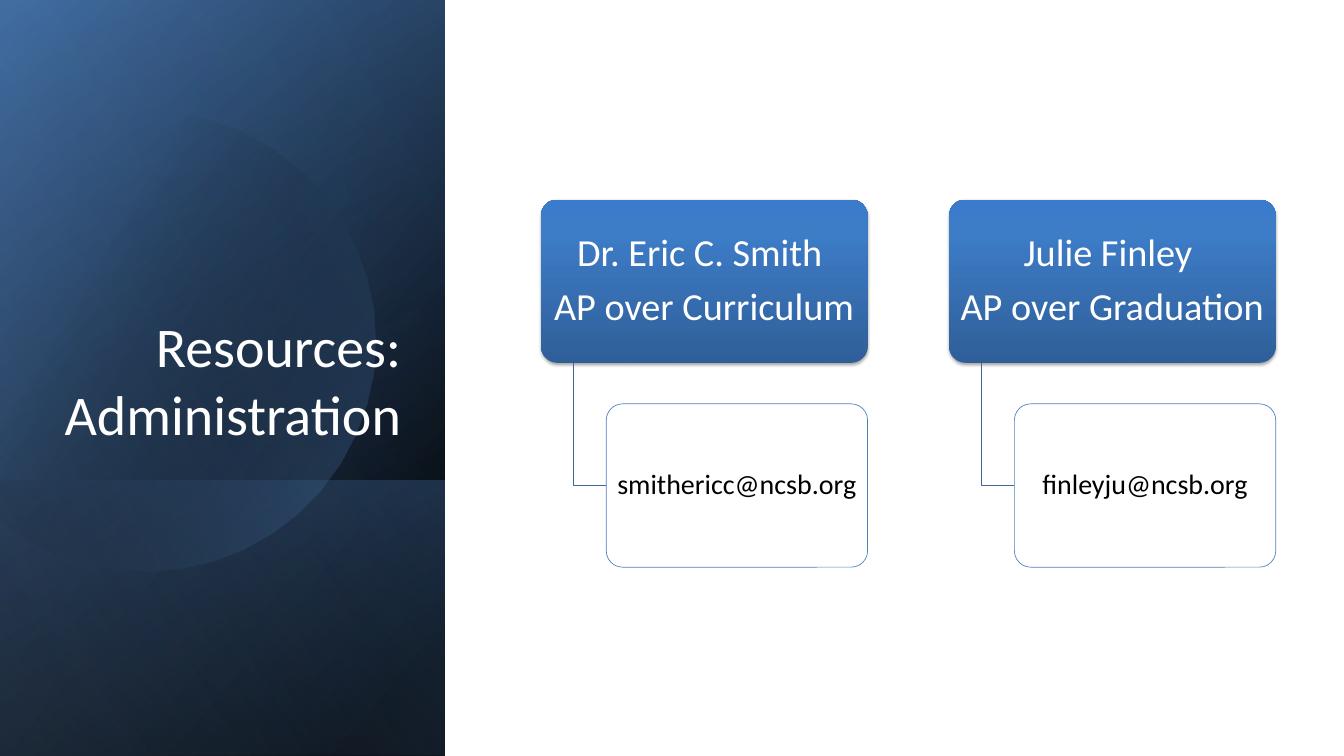
from dataclasses import dataclass
from math import acos, cos, sin

from lxml.etree import SubElement
from pptx import Presentation
from pptx.dml.color import RGBColor
from pptx.enum.shapes import MSO_SHAPE
from pptx.enum.text import MSO_ANCHOR, MSO_AUTO_SIZE, PP_ALIGN
from pptx.oxml import parse_xml
from pptx.oxml.ns import nsdecls, qn
from pptx.util import Pt


@dataclass(frozen=True)
class Theme:
    """Colours, font and type sizes of the slide."""
    font: str = "Calibri"
    white: str = "FFFFFF"
    black: str = "000000"
    accent: str = "4F81BD"
    navy: str = "376092"
    pale: str = "95B3D7"
    stem: str = "3F6797"
    card: tuple = ((0, "2F5F99", 100), (80, "3D7CC7", 100), (100, "3A7CCB", 100))
    title: float = 60
    name: float = 41
    mail: float = 30


T = Theme()
SLIDE_W, SLIDE_H, PANEL_W, BAND_H = 1440, 810, 476.6, 295.2
CARD_X, CARD_Y, CARD_W, CARD_H = 579.6, 213.8, 350, 175
PITCH, INDENT, GAP = 437.3, 70, 43.9
PEOPLE = [
    (["Dr. Eric C. Smith ", "AP over Curriculum"], "smithericc@ncsb.org"),
    (["Julie Finley ", "AP over Graduation"], "finleyju@ncsb.org"),
]


def set_gradient(sp, stops, angle):
    """Fill a shape with (position, colour, opacity) stops along an angle."""
    gs = "".join(
        f'<a:gs pos="{pos * 1000}"><a:srgbClr val="{color}">'
        f'<a:alpha val="{opacity * 1000}"/></a:srgbClr></a:gs>'
        for pos, color, opacity in stops)
    sp.fill.background()
    spPr = sp._element.spPr
    spPr.replace(spPr.find(qn("a:noFill")), parse_xml(
        f'<a:gradFill {nsdecls("a")} rotWithShape="1"><a:gsLst>{gs}</a:gsLst>'
        f'<a:lin ang="{angle * 60000}" scaled="0"/></a:gradFill>'))


def set_line(sp, color):
    """Give a shape a thin solid outline."""
    sp.line.color.rgb = RGBColor.from_string(color)
    sp.line.width = Pt(0.75)


def add_shade(s, top, height, stops, angle):
    """Add one gradient layer of the side panel, turned a quarter."""
    left = (PANEL_W - height) / 2
    sp = s.shapes.add_shape(MSO_SHAPE.RECTANGLE, Pt(left), Pt(top + (height - PANEL_W) / 2),
                            Pt(height), Pt(PANEL_W))
    sp.rotation = 90
    sp._element.spPr.xfrm.set("flipH", "1")
    sp.shadow.inherit = False
    sp.line.fill.background()
    set_gradient(sp, stops, angle)


def add_disc(s, cx, cy, radius, stops, angle, steps=32):
    """Add a disc cut off by the left edge of the slide."""
    half = acos(-cx / radius)
    turns = [half * (2 * i / steps - 1) for i in range(steps + 1)]
    points = [(Pt(cx + radius * cos(t)), Pt(cy + radius * sin(t))) for t in turns]
    fb = s.shapes.build_freeform(*points[0])
    fb.add_line_segments(points[1:], close=True)
    sp = fb.convert_to_shape()
    sp.shadow.inherit = False
    sp.line.fill.background()
    set_gradient(sp, stops, angle)


def add_run(p, text, size, color):
    """Add a formatted run to a paragraph."""
    r = p.add_run()
    r.text = text
    r.font.name, r.font.size = T.font, Pt(size)
    r.font.color.rgb = RGBColor.from_string(color)


def add_box(s, x, y, w, lines, size, color, inset):
    """Add a rounded box with centred lines of text."""
    sp = s.shapes.add_shape(MSO_SHAPE.ROUNDED_RECTANGLE, Pt(x), Pt(y), Pt(w), Pt(CARD_H))
    sp.adjustments[0] = 0.1
    sp.shadow.inherit = False
    tf = sp.text_frame
    tf.word_wrap = True
    tf.vertical_anchor = MSO_ANCHOR.MIDDLE
    tf.margin_left = tf.margin_right = Pt(inset)
    tf.margin_top = tf.margin_bottom = Pt(inset)
    for i, line in enumerate(lines):
        p = tf.add_paragraph() if i else tf.paragraphs[0]
        p.alignment = PP_ALIGN.CENTER
        p.line_spacing = 0.9
        p.space_after = Pt(size * 0.35)
        add_run(p, line, size, color)
    return sp


def add_card_shadow(sp):
    """Add a soft shadow below a shape."""
    effects = sp._element.spPr.find(qn("a:effectLst"))
    shadow = SubElement(effects, qn("a:outerShdw"), blurRad=str(Pt(3.1)), dist=str(Pt(1.8)),
                        dir="5400000", rotWithShape="0")
    color = SubElement(shadow, qn("a:srgbClr"), val=T.black)
    SubElement(color, qn("a:alpha"), val="35000")


def add_stem(s, x, top, right, bottom):
    """Add the angled line from a name card to its address."""
    fb = s.shapes.build_freeform(Pt(x), Pt(top))
    fb.add_line_segments([(Pt(x), Pt(bottom)), (Pt(right), Pt(bottom))], close=False)
    sp = fb.convert_to_shape()
    sp.shadow.inherit = False
    sp.fill.background()
    set_line(sp, T.stem)


def add_person(s, x, lines, mail):
    """Add a name card with its address box hanging below."""
    mail_x, mail_y = x + INDENT, CARD_Y + CARD_H + GAP
    card = add_box(s, x, CARD_Y, CARD_W, lines, T.name, T.white, 6)
    card.line.fill.background()
    set_gradient(card, T.card, 270)
    add_card_shadow(card)
    add_stem(s, x + INDENT / 2, CARD_Y + CARD_H, mail_x, mail_y + CARD_H / 2)
    box = add_box(s, mail_x, mail_y, CARD_W - INDENT, [mail], T.mail, T.black, 4)
    box.fill.solid()
    box.fill.fore_color.rgb = RGBColor.from_string(T.white)
    set_line(box, T.accent)


def add_panel(s):
    """Add the layered dark panel on the left."""
    add_shade(s, 0, SLIDE_H, [(8, T.black, 100), (100, T.navy, 100)], 50)
    add_shade(s, 0, SLIDE_H, [(0, T.black, 0), (99, T.accent, 46)], 30)
    add_shade(s, SLIDE_H - BAND_H, BAND_H, [(2, T.accent, 29), (100, T.black, 30)], 130)
    add_disc(s, 155, 365.5, 247, [(29, T.black, 0), (100, T.accent, 43)], 30)
    add_shade(s, 0, SLIDE_H, [(0, T.black, 0), (99, T.pale, 11)], 120)


def set_title(s, text):
    """Place the title on top of the panel."""
    sp = s.shapes.title
    sp.left, sp.top, sp.width, sp.height = Pt(54), Pt(198.7), Pt(383), Pt(283)
    s.shapes._spTree.append(sp._element)
    tf = sp.text_frame
    tf.word_wrap = True
    tf.auto_size = MSO_AUTO_SIZE.NONE
    tf.vertical_anchor = MSO_ANCHOR.BOTTOM
    p = tf.paragraphs[0]
    p.alignment = PP_ALIGN.RIGHT
    add_run(p, text, T.title, T.white)


def main():
    """Build the slide and save it."""
    prs = Presentation()
    prs.slide_width, prs.slide_height = Pt(SLIDE_W), Pt(SLIDE_H)
    s = prs.slides.add_slide(prs.slide_layouts[5])
    add_panel(s)
    set_title(s, "Resources: Administration")
    for i, (lines, mail) in enumerate(PEOPLE):
        add_person(s, CARD_X + i * PITCH, lines, mail)
    prs.save("out.pptx")


if __name__ == "__main__":
    main()
